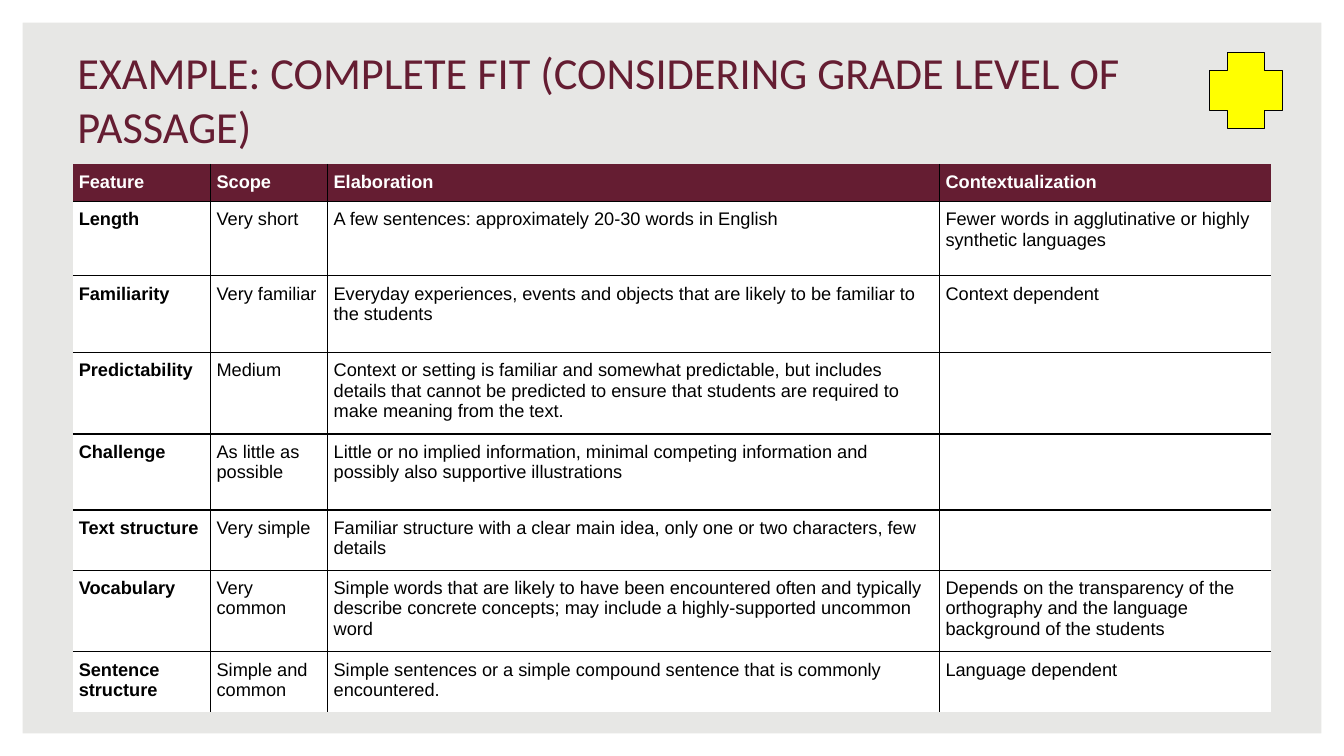
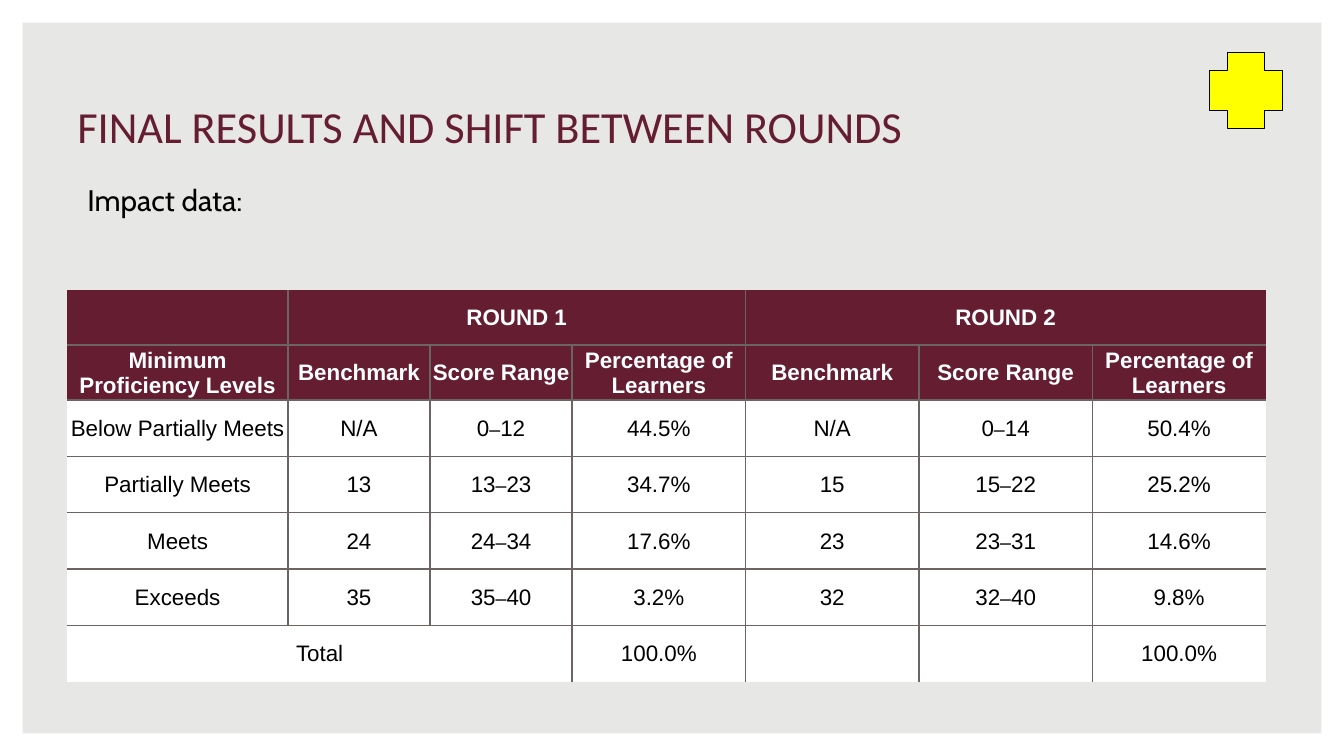
from lxml.etree import SubElement
from pptx import Presentation
from pptx.dml.color import RGBColor
from pptx.enum.shapes import MSO_SHAPE as Preset
from pptx.enum.text import MSO_ANCHOR as Anchor, MSO_AUTO_SIZE as AutoSize, PP_ALIGN as Align
from pptx.oxml.ns import qn
from pptx.util import Pt

BURGUNDY = RGBColor(0x65, 0x1D, 0x32)
PALE_GREY = RGBColor(0xE7, 0xE7, 0xE5)
RULE_GREY = RGBColor(0x6C, 0x64, 0x63)
YELLOW = RGBColor(0xFF, 0xFF, 0x00)
WHITE = RGBColor(0xFF, 0xFF, 0xFF)
BLACK = RGBColor(0x00, 0x00, 0x00)


def write(frame, text, size=16, font="Arial", color=BLACK, bold=False,
          align=Align.LEFT, dash_size=None):
    paragraph = frame.paragraphs[0]
    paragraph.alignment = align
    for piece in text.replace("–", "|–|").split("|"):
        run = paragraph.add_run()
        run.text = piece
        run.font.size = Pt(dash_size if piece == "–" else size)
        run.font.name = font
        run.font.bold = bold
        run.font.color.rgb = color
    return paragraph


def add_grid(slide, left, top, widths, heights, rows, rule, margins, anchor,
             header_rows=1, bold_first=False, merges=(), **text_format):
    grid = slide.shapes.add_table(
        len(heights), len(widths), Pt(left), Pt(top), Pt(sum(widths)), Pt(sum(heights))).table
    grid.first_row = grid.horz_banding = False
    for column, width in zip(grid.columns, widths):
        column.width = Pt(width)
    for row, height in zip(grid.rows, heights):
        row.height = Pt(height)
    for r, first, last in merges:
        grid.cell(r, first).merge(grid.cell(r, last))
    for r, texts in enumerate(rows):
        for c, text in enumerate(texts):
            cell = grid.cell(r, c)
            header = r < header_rows
            cell.margin_left, cell.margin_top, cell.margin_right, cell.margin_bottom = map(Pt, margins)
            cell.vertical_anchor = anchor
            end = c + (cell.span_width if cell.is_merge_origin else 1)
            inner_sides = {"a:lnL": c > 0, "a:lnR": end < len(widths),
                           "a:lnT": r > 0, "a:lnB": r < len(rows) - 1}
            properties = cell._tc.get_or_add_tcPr()
            for side, inner in inner_sides.items():
                border = SubElement(properties, qn(side), w=str(Pt(1)))
                if inner:
                    paint = SubElement(border, qn("a:solidFill"))
                    SubElement(paint, qn("a:srgbClr"), val=str(rule))
                else:
                    SubElement(border, qn("a:noFill"))
            cell.fill.solid()
            cell.fill.fore_color.rgb = BURGUNDY if header else WHITE
            if text:
                write(cell.text_frame, text, color=WHITE if header else BLACK,
                      bold=header or (bold_first and c == 0), **text_format)


deck = Presentation()
deck.slide_width, deck.slide_height = Pt(960), Pt(540)
master = deck.slide_master
master.background.fill.solid()
master.background.fill.fore_color.rgb = PALE_GREY

fit_slide = deck.slides.add_slide(deck.slide_layouts[5])
results_slide = deck.slides.add_slide(deck.slide_layouts[1])

border_frame = fit_slide.shapes.add_shape(Preset.FRAME, 0, 0, Pt(960), Pt(540))
border_frame.adjustments[0] = 0.03
border_frame.shadow.inherit = False
border_frame.fill.solid()
border_frame.fill.fore_color.rgb = WHITE
border_frame.line.fill.background()
master.element.cSld.spTree.insert(2, border_frame.element)

titles = [
    (fit_slide, "EXAMPLE: COMPLETE FIT (CONSIDERING GRADE LEVEL OF PASSAGE)"),
    (results_slide, "FINAL RESULTS AND SHIFT BETWEEN ROUNDS"),
]
for slide, heading in titles:
    title = slide.shapes.title
    title.left, title.top, title.width, title.height = Pt(48), Pt(66.2), Pt(856), Pt(46)
    title.text_frame.auto_size = AutoSize.NONE
    title.text_frame.vertical_anchor = Anchor.BOTTOM
    write(title.text_frame, heading, size=31.7, font="Calibri", color=BURGUNDY)

    plus = slide.shapes.add_shape(Preset.CROSS, Pt(863.7), Pt(37.3), Pt(52.5), Pt(54.6))
    plus.adjustments[0] = 0.25
    plus.shadow.inherit = False
    plus.fill.solid()
    plus.fill.fore_color.rgb = YELLOW
    plus.line.color.rgb = BLACK
    plus.line.width = Pt(0.75)

features = [
    ("Feature", "Scope", "Elaboration", "Contextualization"),
    ("Length", "Very short", "A few sentences: approximately 20-30 words in English",
     "Fewer words in agglutinative or highly synthetic languages"),
    ("Familiarity", "Very familiar",
     "Everyday experiences, events and objects that are likely to be familiar to the students",
     "Context dependent"),
    ("Predictability", "Medium",
     "Context or setting is familiar and somewhat predictable, but includes details that cannot "
     "be predicted to ensure that students are required to make meaning from the text.", ""),
    ("Challenge", "As little as possible",
     "Little or no implied information, minimal competing information and possibly also "
     "supportive illustrations", ""),
    ("Text structure", "Very simple",
     "Familiar structure with a clear main idea, only one or two characters, few details", ""),
    ("Vocabulary", "Very common",
     "Simple words that are likely to have been encountered often and typically describe "
     "concrete concepts; may include a highly-supported uncommon word",
     "Depends on the transparency of the orthography and the language background of the students"),
    ("Sentence structure", "Simple and common",
     "Simple sentences or a simple compound sentence that is commonly encountered.",
     "Language dependent"),
]
add_grid(fit_slide, 52, 117, [98.5, 83.6, 437.1, 236.8],
         [26.8, 53.2, 54.6, 58.5, 54.3, 42.9, 58.2, 42.9], features, BLACK,
         margins=(4.3, 5.8, 4.3, 5.8), anchor=Anchor.TOP, bold_first=True, size=13)

impact = results_slide.placeholders[1]
impact.left, impact.top, impact.width, impact.height = Pt(48), Pt(126), Pt(856), Pt(348)
impact.text_frame.auto_size = AutoSize.NONE
impact_line = write(impact.text_frame, "Impact data:", size=21.2, font="Cabin")
impact_line.space_before = Pt(12)
impact_format = impact_line._p.get_or_add_pPr()
impact_format.set("marL", str(Pt(7.2)))
impact_format.set("indent", "0")
SubElement(impact_format, qn("a:buNone"))

round_columns = ("Benchmark", "Score Range", "Percentage of Learners")
results = [
    ("", "ROUND 1", "", "", "ROUND 2", "", ""),
    ("Minimum Proficiency Levels", *round_columns, *round_columns),
    ("Below Partially Meets", "N/A", "0–12", "44.5%", "N/A", "0–14", "50.4%"),
    ("Partially Meets", "13", "13–23", "34.7%", "15", "15–22", "25.2%"),
    ("Meets", "24", "24–34", "17.6%", "23", "23–31", "14.6%"),
    ("Exceeds", "35", "35–40", "3.2%", "32", "32–40", "9.8%"),
    ("Total", "", "", "100.0%", "", "", "100.0%"),
]
add_grid(results_slide, 48, 207.3, [157.7] + [101.5] * 2 + [123.9] * 4,
         [39.2] * 2 + [40.3] * 5, results, RULE_GREY,
         margins=(0.7, 0.7, 0.7, 0), anchor=Anchor.MIDDLE, header_rows=2,
         merges=[(0, 1, 3), (0, 4, 6), (6, 0, 2)], align=Align.CENTER, dash_size=14)

deck.save("out.pptx")
